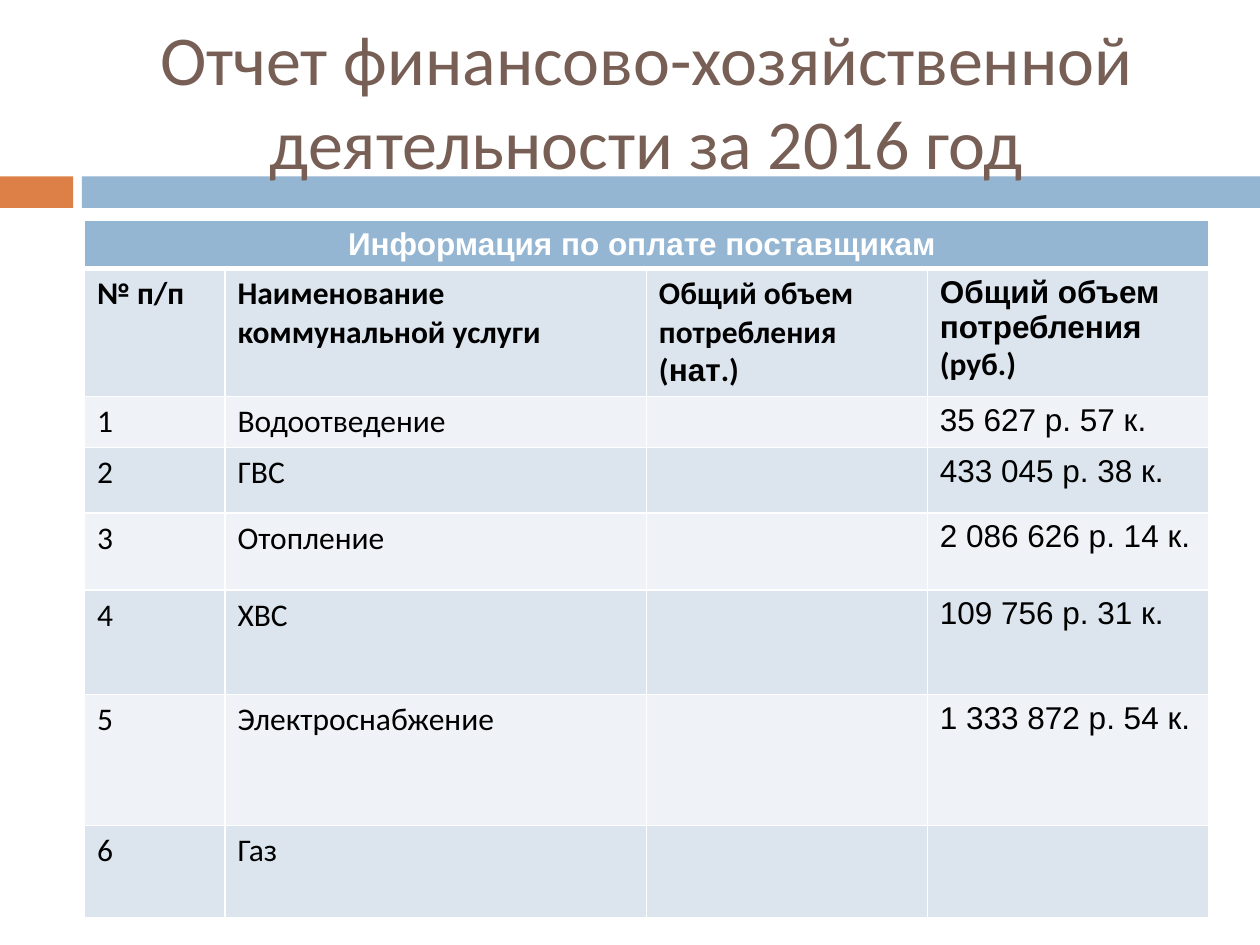
"""Build the utility payments report slide: title, accent bars and table."""
import dataclasses

import pptx
import pptx.dml.color
import pptx.enum.shapes
import pptx.enum.text
import pptx.oxml
import pptx.oxml.ns
import pptx.util

ALIGN = pptx.enum.text.PP_ALIGN
ANCHOR = pptx.enum.text.MSO_ANCHOR


@dataclasses.dataclass(frozen=True)
class Theme:
    """Colours, fonts and type sizes of the slide."""
    orange: str = "DD8047"
    blue: str = "94B6D2"
    brown: str = "775F55"
    band_dark: str = "DCE5EE"
    band_light: str = "EFF3F7"
    white: str = "FFFFFF"
    black: str = "000000"
    body: str = "Calibri"
    figures: str = "Arial"
    title_size: int = 40
    table_size: int = 18
    thin: int = 1
    thick: int = 3


T = Theme()
WIDTH, HEIGHT = 10, 7.5
LEFT, CONTENT = 0.67, 8.92
COL_SHARES = (1, 3, 2, 2)
ROW_HEIGHTS = (0.37, 0.92, 0.37, 0.52, 0.61, 0.83, 1.04, 0.73)
TITLE = "Отчет финансово-хозяйственной деятельности за 2016 год"
CAPTION = "Информация по оплате поставщикам "
HEADERS = (
    [("№ п/п", T.body)],
    [("Наименование коммунальной услуги", T.body)],
    [("Общий объем потребления (", T.body), ("нат", T.figures), (".)", T.body)],
    [("Общий объем потребления ", T.figures), ("(руб.)", T.body)],
)
SERVICES = (
    ("Водоотведение", "35 627 р. 57 к."),
    ("ГВС", "433 045 р. 38 к."),
    ("Отопление", "2 086 626 р. 14 к."),
    ("ХВС", "109 756 р. 31 к."),
    ("Электроснабжение", "1 333 872 р. 54 к."),
    ("Газ", ""),
)


def rgb(value):
    """Return a colour object for a hex string."""
    return pptx.dml.color.RGBColor.from_string(value)


def place(shape, *box):
    """Set left, top, width and height in inches."""
    for name, value in zip(("left", "top", "width", "height"), box):
        setattr(shape, name, pptx.util.Inches(value))


def write(tf, runs, size, color, bold=False, align=ALIGN.LEFT):
    """Fill the first paragraph with (text, font) runs."""
    p = tf.paragraphs[0]
    p.alignment = align
    for text, font in runs:
        r = p.add_run()
        r.text = text
        for name, value in {"name": font, "size": pptx.util.Pt(size), "bold": bold}.items():
            setattr(r.font, name, value)
        r.font.color.rgb = rgb(color)


def add_bar(s, left, width, color):
    """Draw one part of the band under the title."""
    sp = s.shapes.add_shape(
        pptx.enum.shapes.MSO_SHAPE.RECTANGLE,
        *(pptx.util.Inches(v) for v in (left, 1.4, width, 0.25)))
    sp.shadow.inherit = False
    sp.fill.solid()
    sp.fill.fore_color.rgb = rgb(color)
    sp.line.fill.background()


def add_title(s):
    """Format the title placeholder and bring it in front of the band."""
    title = s.shapes.title
    place(title, LEFT, 0.25, CONTENT, 1.08)
    tf = title.text_frame
    formats = {"word_wrap": True, "vertical_anchor": ANCHOR.MIDDLE,
               "auto_size": pptx.enum.text.MSO_AUTO_SIZE.NONE}
    for name, value in formats.items():
        setattr(tf, name, value)
    write(tf, [(TITLE, T.body)], T.title_size, T.brown, align=ALIGN.CENTER)
    title.element.getparent().append(title.element)


def style_cell(cell, fill, top, bottom):
    """Give a cell white borders and a solid fill."""
    tc_pr = cell._tc.get_or_add_tcPr()
    for side, points in {"L": T.thin, "R": T.thin, "T": top, "B": bottom}.items():
        tc_pr.append(pptx.oxml.parse_xml(
            f'<a:ln{side} {pptx.oxml.ns.nsdecls("a")} w="{pptx.util.Pt(points)}">'
            f'<a:solidFill><a:srgbClr val="{T.white}"/></a:solidFill></a:ln{side}>'))
    cell.fill.solid()
    cell.fill.fore_color.rgb = rgb(fill)


def row_fill(i):
    """Return the fill of table row i: caption, then alternating bands."""
    if i == 0:
        return T.blue
    return T.band_dark if i % 2 else T.band_light


def add_table(s):
    """Add the payments table."""
    box = (LEFT, 1.75, CONTENT, sum(ROW_HEIGHTS))
    table = s.shapes.add_table(
        len(ROW_HEIGHTS), len(COL_SHARES), *(pptx.util.Inches(v) for v in box)).table
    for column, share in zip(table.columns, COL_SHARES):
        column.width = pptx.util.Inches(CONTENT * share / sum(COL_SHARES))
    for i, (row, height) in enumerate(zip(table.rows, ROW_HEIGHTS)):
        row.height = pptx.util.Inches(height)
        for cell in row.cells:
            style_cell(cell, row_fill(i), T.thick if i == 1 else T.thin,
                       T.thick if i == 0 else T.thin)
    table.cell(0, 0).merge(table.cell(0, len(COL_SHARES) - 1))
    write(table.cell(0, 0).text_frame, [(CAPTION, T.figures)], T.table_size,
          T.white, True, ALIGN.CENTER)
    for j, runs in enumerate(HEADERS):
        write(table.cell(1, j).text_frame, runs, T.table_size, T.black, True)
    for n, (service, amount) in enumerate(SERVICES, 1):
        values = ((0, str(n), T.body), (1, service, T.body), (3, amount, T.figures))
        for j, text, font in values:
            if text:
                write(table.cell(n + 1, j).text_frame, [(text, font)],
                      T.table_size, T.black)


def main():
    """Build and save the slide."""
    prs = pptx.Presentation()
    prs.slide_width = pptx.util.Inches(WIDTH)
    prs.slide_height = pptx.util.Inches(HEIGHT)
    s = prs.slides.add_slide(prs.slide_layouts.get_by_name("Title Only"))
    s.background.fill.solid()
    s.background.fill.fore_color.rgb = rgb(T.white)
    add_bar(s, 0, 0.58, T.orange)
    add_bar(s, 0.65, WIDTH - 0.65, T.blue)
    add_title(s)
    add_table(s)
    prs.save("out.pptx")


if __name__ == "__main__":
    main()
